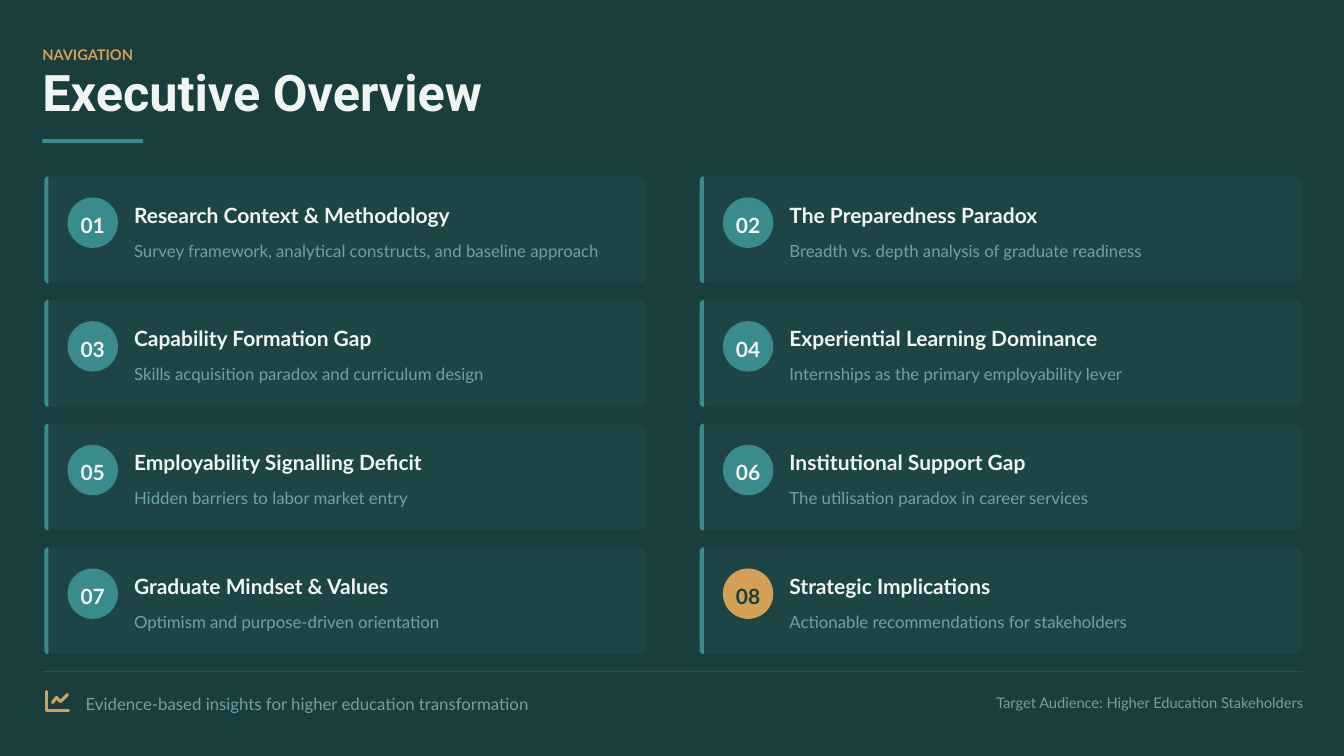
from math import cos, pi, sin

from lxml.etree import SubElement
from pptx import Presentation
from pptx.dml.color import RGBColor
from pptx.enum.shapes import MSO_CONNECTOR as CONN, MSO_SHAPE as SHAPE
from pptx.enum.text import MSO_ANCHOR as ANCHOR, MSO_AUTO_SIZE as FIT, PP_ALIGN as ALIGN
from pptx.oxml.ns import qn
from pptx.util import Inches, Pt

COLORS = {
    "background": "1A3D3D",
    "teal": "3A8C8C",
    "gold": "D4A056",
    "light": "F0F4F4",
    "muted": "6FA3A3",
}

SECTIONS = [
    ("Research Context & Methodology",
     "Survey framework, analytical constructs, and baseline approach"),
    ("The Preparedness Paradox", "Breadth vs. depth analysis of graduate readiness"),
    ("Capability Formation Gap", "Skills acquisition paradox and curriculum design"),
    ("Experiential Learning Dominance", "Internships as the primary employability lever"),
    ("Employability Signalling Deficit", "Hidden barriers to labor market entry"),
    ("Institutional Support Gap", "The utilisation paradox in career services"),
    ("Graduate Mindset & Values", "Optimism and purpose-driven orientation"),
    ("Strategic Implications", "Actionable recommendations for stakeholders"),
]

COLUMN_STEP = 6.5
ROW_STEP = 3.68 / 3


class Deck:
    font = "Lato"

    def __init__(self, prs):
        self.s = prs.slides.add_slide(prs.slide_layouts[5])
        self.color(self.s.background.fill, "background")

    def color(self, fill, name, alpha=None):
        fill.solid()
        fill.fore_color.rgb = RGBColor.from_string(COLORS[name])
        if alpha:
            clr = fill._xPr.find(qn("a:solidFill"))[0]
            SubElement(clr, qn("a:alpha"), val=str(alpha * 1000))

    def set_text(self, sp, text, size, color, bold=False, spacing=1.2,
                 align=ALIGN.LEFT, font=None):
        tf = sp.text_frame
        tf.word_wrap = True
        tf.auto_size = FIT.NONE
        tf.vertical_anchor = ANCHOR.MIDDLE
        tf.margin_left = tf.margin_right = tf.margin_top = tf.margin_bottom = 0
        p = tf.paragraphs[0]
        p.text = text
        p.alignment = align
        p.line_spacing = spacing
        p.font.name = font or self.font
        p.font.size = Pt(size)
        p.font.bold = bold
        p.font.color.rgb = RGBColor.from_string(COLORS[color])

    def title(self, x, y, w, h, text):
        sp = self.s.shapes.title
        sp.left, sp.top, sp.width, sp.height = map(Inches, (x, y, w, h))
        self.set_text(sp, text, 36, "light", True, 0.8, font="Roboto")

    def text(self, x, y, w, h, text, size, color, **style):
        sp = self.s.shapes.add_textbox(*map(Inches, (x, y, w, h)))
        self.set_text(sp, text, size, color, **style)

    def shape(self, kind, x, y, w, h, color, alpha=None):
        sp = self.s.shapes.add_shape(kind, *map(Inches, (x, y, w, h)))
        sp.shadow.inherit = False
        sp.line.fill.background()
        self.color(sp.fill, color, alpha)
        return sp

    def outline(self, points, close):
        start, *rest = [(Inches(x), Inches(y)) for x, y in points]
        builder = self.s.shapes.build_freeform(*start)
        builder.add_line_segments(rest, close=close)
        sp = builder.convert_to_shape()
        sp.shadow.inherit = False
        return sp

    def card_edge(self, x, y, h, r):
        turns = [i * pi / 16 for i in range(9)]
        top = [(x + r - r * cos(t), y + r - r * sin(t)) for t in turns]
        bottom = [(px, 2 * y + h - py) for px, py in reversed(top)]
        sp = self.outline(top + bottom, True)
        sp.line.fill.background()
        self.color(sp.fill, "teal")

    def stroke(self, points, color, width):
        sp = self.outline(points, False)
        sp.fill.background()
        self.color(sp.line.fill, color)
        sp.line.width = Pt(width)
        ln = sp._element.spPr.find(qn("a:ln"))
        ln.set("cap", "rnd")
        SubElement(ln, qn("a:round"))

    def rule(self, x1, x2, y, color, alpha):
        sp = self.s.shapes.add_connector(CONN.STRAIGHT, *map(Inches, (x1, y, x2, y)))
        sp.line.width = Pt(0.75)
        self.color(sp.line.fill, color, alpha)
        SubElement(sp._element.spPr, qn("a:effectLst"))

    def card(self, x, y, number, heading, detail, highlight):
        sp = self.shape(SHAPE.ROUNDED_RECTANGLE, x, y, 5.98, 1.06, "teal", 10)
        sp.adjustments[0] = 0.08
        self.card_edge(x, y, 1.06, 0.04)
        badge, ink = ("gold", "background") if highlight else ("teal", "light")
        sp = self.shape(SHAPE.OVAL, x + 0.23, y + 0.21, 0.5, 0.5, badge)
        self.set_text(sp, f"{number:02}", 15, ink, True, align=ALIGN.CENTER)
        self.text(x + 0.89, y + 0.21, 4.9, 0.29, heading, 15, "light", bold=True)
        self.text(x + 0.89, y + 0.58, 4.9, 0.25, detail, 12, "muted", spacing=1.3)


def main():
    prs = Presentation()
    prs.slide_width, prs.slide_height = Inches(13.33), Inches(7.5)
    deck = Deck(prs)
    deck.text(0.42, 0.42, 12.5, 0.21, "NAVIGATION", 10.5, "gold", bold=True)
    deck.title(0.42, 0.71, 12.5, 0.5, "Executive Overview")
    deck.shape(SHAPE.RECTANGLE, 0.42, 1.38, 1, 0.04, "teal")

    for i, (heading, detail) in enumerate(SECTIONS):
        row, column = divmod(i, 2)
        deck.card(0.44 + column * COLUMN_STEP, 1.75 + row * ROW_STEP,
                  i + 1, heading, detail, i == len(SECTIONS) - 1)

    deck.rule(0.42, 12.92, 6.66, "teal", 30)
    deck.stroke([(0.46, 6.86), (0.46, 7.05), (0.68, 7.05)], "gold", 2.25)
    deck.stroke([(0.52, 6.97), (0.56, 6.92), (0.6, 6.96), (0.67, 6.89)], "gold", 2.25)
    deck.text(0.85, 6.83, 5, 0.25,
              "Evidence-based insights for higher education transformation",
              12, "muted", spacing=1.3)
    deck.text(8.93, 6.85, 4, 0.21, "Target Audience: Higher Education Stakeholders",
              10.5, "muted", align=ALIGN.RIGHT)
    prs.save("out.pptx")


if __name__ == "__main__":
    main()
